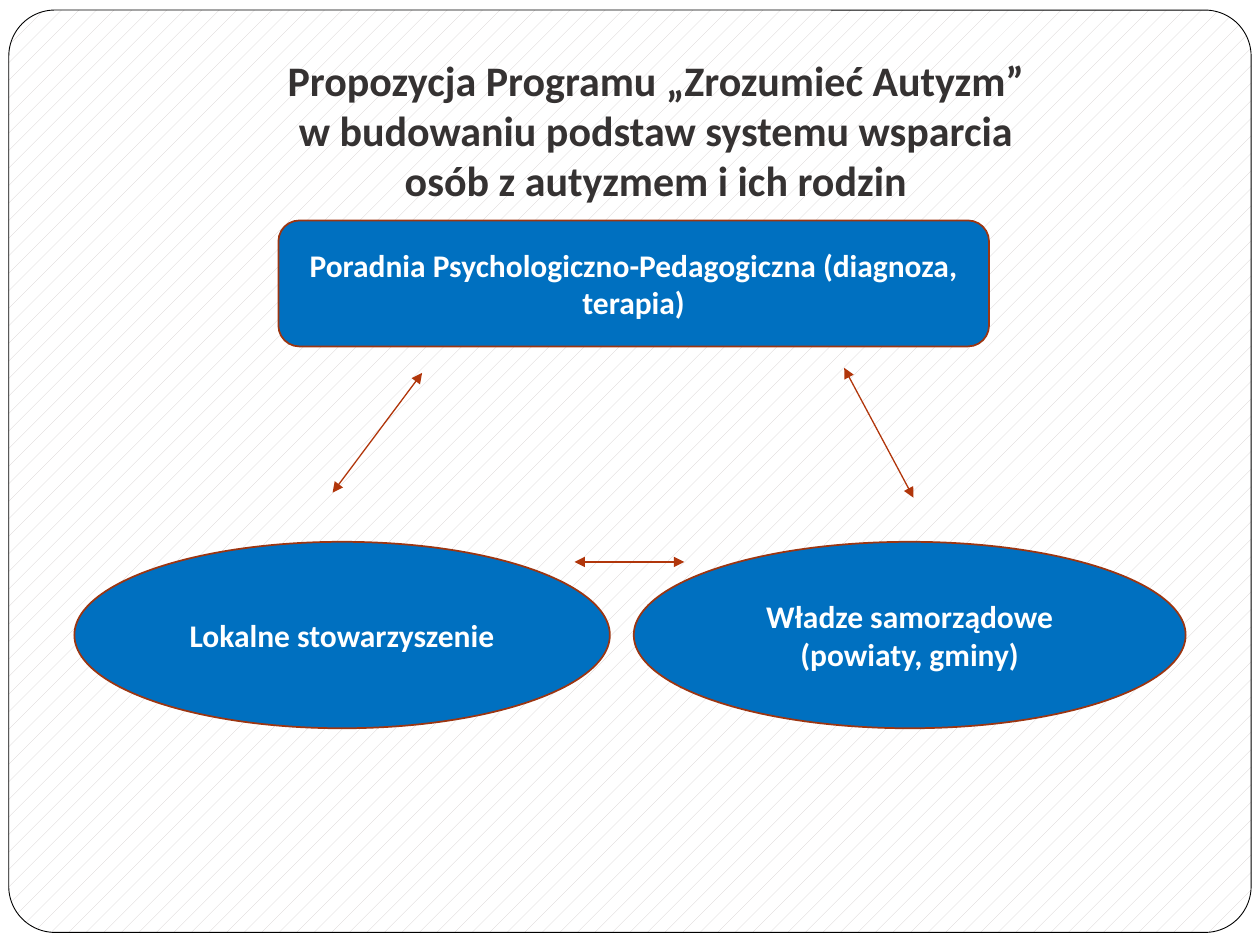
from lxml.etree import SubElement
from pptx import Presentation
from pptx.dml.color import RGBColor
from pptx.enum.dml import MSO_PATTERN
from pptx.enum.shapes import MSO_CONNECTOR, MSO_SHAPE
from pptx.enum.text import MSO_ANCHOR, PP_ALIGN
from pptx.oxml.ns import qn
from pptx.util import Inches, Pt

COLORS = {
    "paper": "FFFFFF",
    "hatch": "D3CECE",
    "frame": "000000",
    "node": "0070C0",
    "node_line": "9C3511",
    "arrow": "B1360B",
    "title": "353232",
    "label": "FFFFFF",
}


def color(name):
    return RGBColor.from_string(COLORS[name])


def write(frame, text, *, size, ink, wrap=True, anchor=MSO_ANCHOR.MIDDLE):
    """Fill a text frame with centred bold text, one paragraph per line."""
    frame.word_wrap = wrap
    frame.vertical_anchor = anchor
    for index, line in enumerate(text.split("\n")):
        paragraph = frame.paragraphs[0] if index == 0 else frame.add_paragraph()
        paragraph.alignment = PP_ALIGN.CENTER
        run = paragraph.add_run()
        run.text = line
        run.font.name = "Calibri"
        run.font.size = Pt(size)
        run.font.bold = True
        run.font.color.rgb = color(ink)


class Diagram:
    """Holds the slide and the look shared by its elements."""

    label_size = 18
    title_size = 24

    def __init__(self, slide):
        self.slide = slide
        slide.background.fill.solid()
        slide.background.fill.fore_color.rgb = color("paper")

    def outline(self, kind, box, line, width):
        shape = self.slide.shapes.add_shape(kind, *map(Inches, box))
        shape.shadow.inherit = False
        shape.line.color.rgb = color(line)
        shape.line.width = Pt(width)
        return shape

    def frame(self, box):
        border = self.outline(MSO_SHAPE.ROUNDED_RECTANGLE, box, "frame", 0.5)
        border.adjustments[0] = 0.05
        border.fill.patterned()
        border.fill.pattern = MSO_PATTERN.PERCENT_5
        border.fill.fore_color.rgb = color("hatch")
        border.fill.back_color.rgb = color("paper")

    def node(self, kind, box, text):
        node = self.outline(kind, box, "node_line", 1)
        node.fill.solid()
        node.fill.fore_color.rgb = color("node")
        write(node.text_frame, text, size=self.label_size, ink="label")

    def double_arrow(self, start, end):
        arrow = self.slide.shapes.add_connector(
            MSO_CONNECTOR.STRAIGHT, *map(Inches, start + end))
        arrow.line.color.rgb = color("arrow")
        arrow.line.width = Pt(0.75)
        properties = arrow.line._get_or_add_ln()
        for tip in ("a:headEnd", "a:tailEnd"):
            SubElement(properties, qn(tip), type="triangle")
        SubElement(arrow._element.spPr, qn("a:effectLst"))

    def title(self, box, text):
        heading = self.slide.shapes.add_textbox(*map(Inches, box))
        write(heading.text_frame, text, size=self.title_size, ink="title",
              wrap=False, anchor=MSO_ANCHOR.TOP)


def main():
    presentation = Presentation()
    presentation.slide_width = Inches(10)
    presentation.slide_height = Inches(7.5)
    diagram = Diagram(presentation.slides.add_slide(presentation.slide_layouts[6]))

    diagram.frame((0.07, 0.08, 9.86, 7.32))
    diagram.node(MSO_SHAPE.ROUNDED_RECTANGLE, (2.21, 1.75, 5.64, 1),
                 "Poradnia Psychologiczno-Pedagogiczna (diagnoza, terapia)")
    for left, width, partner in (
        (0.59, 4.25, "Lokalne stowarzyszenie"),
        (5.03, 4.38, "Władze samorządowe (powiaty, gminy)"),
    ):
        diagram.node(MSO_SHAPE.OVAL, (left, 4.3, width, 1.48), partner)

    for start, end in (
        ((3.35, 2.96), (2.64, 3.91)),
        ((6.7, 2.92), (7.25, 3.95)),
        ((4.56, 4.46), (5.43, 4.46)),
    ):
        diagram.double_arrow(start, end)

    diagram.title((1.84, 0.38, 6.73, 1.31),
                  "Propozycja Programu „Zrozumieć Autyzm”\n"
                  "w budowaniu podstaw systemu wsparcia\n"
                  "osób z autyzmem i ich rodzin")
    presentation.save("out.pptx")


if __name__ == "__main__":
    main()
